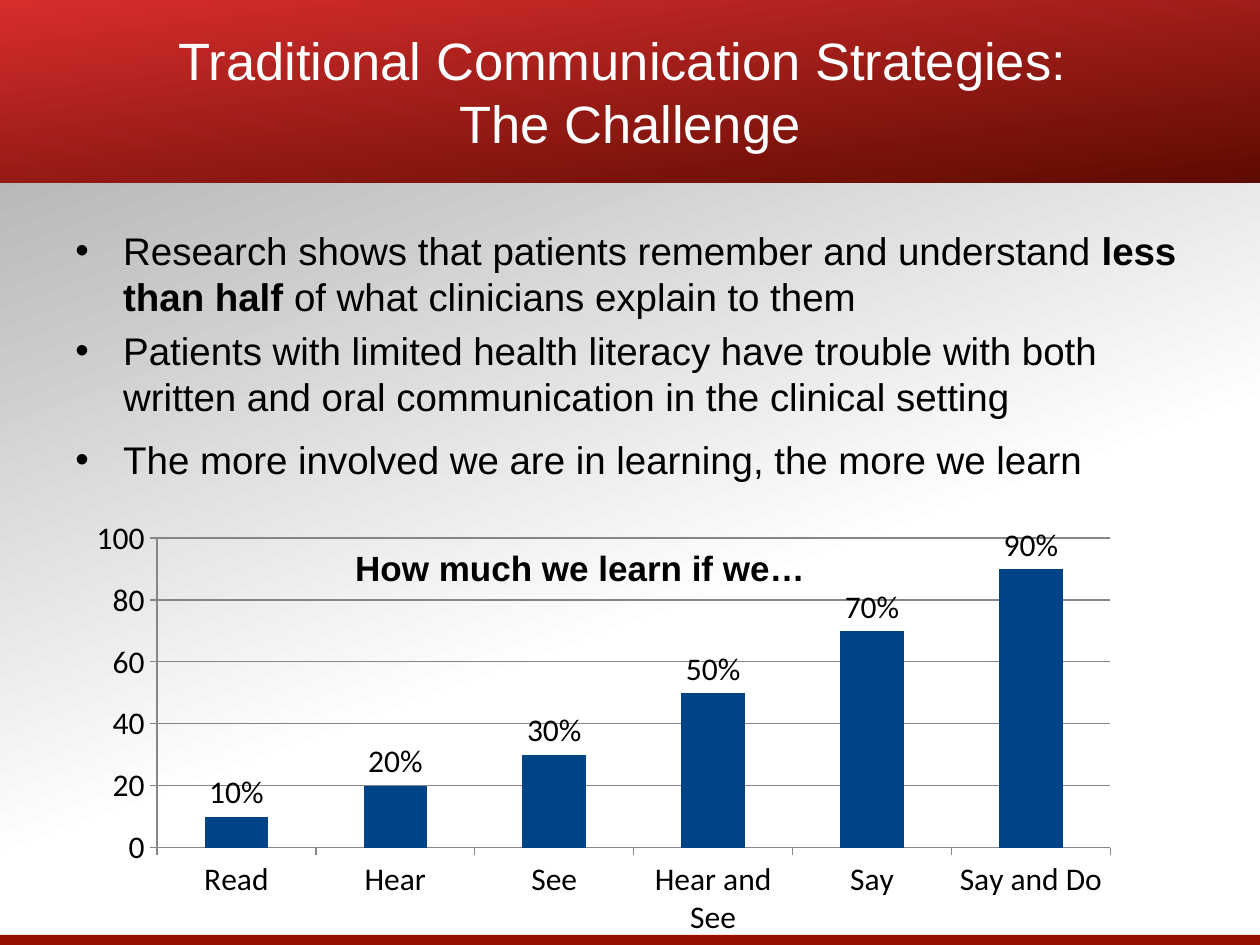
from lxml.etree import SubElement
from pptx import Presentation
from pptx.chart.data import CategoryChartData
from pptx.dml.color import RGBColor
from pptx.enum.chart import XL_CHART_TYPE, XL_LABEL_POSITION, XL_TICK_MARK
from pptx.enum.shapes import MSO_SHAPE
from pptx.enum.text import MSO_ANCHOR, PP_ALIGN
from pptx.oxml.ns import qn
from pptx.util import Inches, Pt

TITLE = "Traditional Communication Strategies: \vThe Challenge"
# Each bullet: (text, bold) runs, space before in points, line spacing
BULLETS = [
    ([("Research shows that patients remember and understand ", False),
      ("less than half", True),
      (" of what clinicians explain to them", False)], 4.4, 1.0),
    ([("Patients with limited health literacy have trouble with both written "
       "and oral communication in the clinical setting", False)], 4.4, 1.0),
    ([("The more involved we are in learning, the more we learn", False)], 5.5, 1.15),
]
CHART_TITLE = "How much we learn if we…"
LEARNED = {"Read": 10, "Hear": 20, "See": 30,
           "Hear and See": 50, "Say": 70, "Say and Do": 90}


def rgb(value):
    return RGBColor.from_string(value)


def box(left, top, width, height):
    return [Inches(v) for v in (left, top, width, height)]


def style(font, size, color="000000", name="Arial", bold=None):
    font.size, font.name, font.bold = Pt(size), name, bold
    font.color.rgb = rgb(color)


def shade(fill, angle, stops):
    """Two-stop gradient; angle runs clockwise from left-to-right."""
    fill.gradient()
    fill.gradient_angle = 360 - angle
    for stop, (position, color) in zip(fill.gradient_stops, stops):
        stop.position = position
        stop.color.rgb = rgb(color)


def add_bar(slide, *place):
    bar = slide.shapes.add_shape(MSO_SHAPE.RECTANGLE, *box(*place))
    bar.shadow.inherit = False
    bar.line.fill.background()
    return bar


def add_text(slide, *place):
    frame = slide.shapes.add_textbox(*box(*place)).text_frame
    frame.word_wrap = True
    return frame


def add_bullet(paragraph):
    props = paragraph._p.get_or_add_pPr()
    props.set("marL", str(Inches(0.38)))
    props.set("indent", str(Inches(-0.38)))
    SubElement(props, qn("a:buFont")).set("typeface", "Arial")
    SubElement(props, qn("a:buChar")).set("char", "•")


def add_learning_chart(slide):
    data = CategoryChartData()
    data.categories = list(LEARNED)
    data.add_series("Series 1", list(LEARNED.values()))
    chart = slide.shapes.add_chart(
        XL_CHART_TYPE.COLUMN_CLUSTERED, *box(0.6, 4.05, 8.38, 3.45), data).chart
    chart.has_legend = chart.has_title = False
    style(chart.font, 18, name="Calibri")

    values = chart.value_axis
    values.minimum_scale, values.maximum_scale, values.major_unit = 0, 100, 20
    values.has_major_gridlines = True
    for axis in (chart.category_axis, values):
        axis.major_tick_mark = XL_TICK_MARK.OUTSIDE
    for part in (chart.category_axis, values, values.major_gridlines):
        part.format.line.color.rgb = rgb("868686")
        part.format.line.width = Pt(0.75)

    plot = chart.plots[0]
    plot.gap_width, plot.vary_by_categories = 150, False
    columns = plot.series[0].format.fill
    columns.solid()
    columns.fore_color.rgb = rgb("004488")
    plot.has_data_labels = True
    labels = plot.data_labels
    labels.show_value = True
    labels.number_format, labels.number_format_is_linked = '0"%"', False
    labels.position = XL_LABEL_POSITION.OUTSIDE_END


def main():
    prs = Presentation()
    prs.slide_width, prs.slide_height = Inches(10), Inches(7.5)
    slide = prs.slides.add_slide(prs.slide_layouts[6])
    shade(slide.background.fill, 70, [(0, "A6A6A6"), (0.62, "FFFFFF")])

    footer = add_bar(slide, 0, 7.42, 10, 0.1)
    footer.fill.solid()
    footer.fill.fore_color.rgb = rgb("951100")

    header = add_bar(slide, 0, 0, 10, 1.45)
    shade(header.fill, 83, [(0, "D72D2D"), (1, "5E0B00")])
    header.text_frame.vertical_anchor = MSO_ANCHOR.MIDDLE
    heading = header.text_frame.paragraphs[0]
    heading.text = TITLE
    heading.alignment = PP_ALIGN.CENTER
    style(heading.font, 30, "FFFFFF")

    body = add_text(slide, 0.5, 1.75, 9, 2.39)
    for i, (runs, before, spacing) in enumerate(BULLETS):
        paragraph = body.add_paragraph() if i else body.paragraphs[0]
        paragraph.space_before, paragraph.line_spacing = Pt(before), spacing
        add_bullet(paragraph)
        style(paragraph.font, 22)
        for text, bold in runs:
            run = paragraph.add_run()
            run.text = text
            if bold:
                run.font.bold = True

    add_learning_chart(slide)
    caption = add_text(slide, 2.72, 4.29, 4.56, 0.44).paragraphs[0]
    caption.text = CHART_TITLE
    style(caption.font, 20, bold=True)

    prs.save("out.pptx")


if __name__ == "__main__":
    main()
